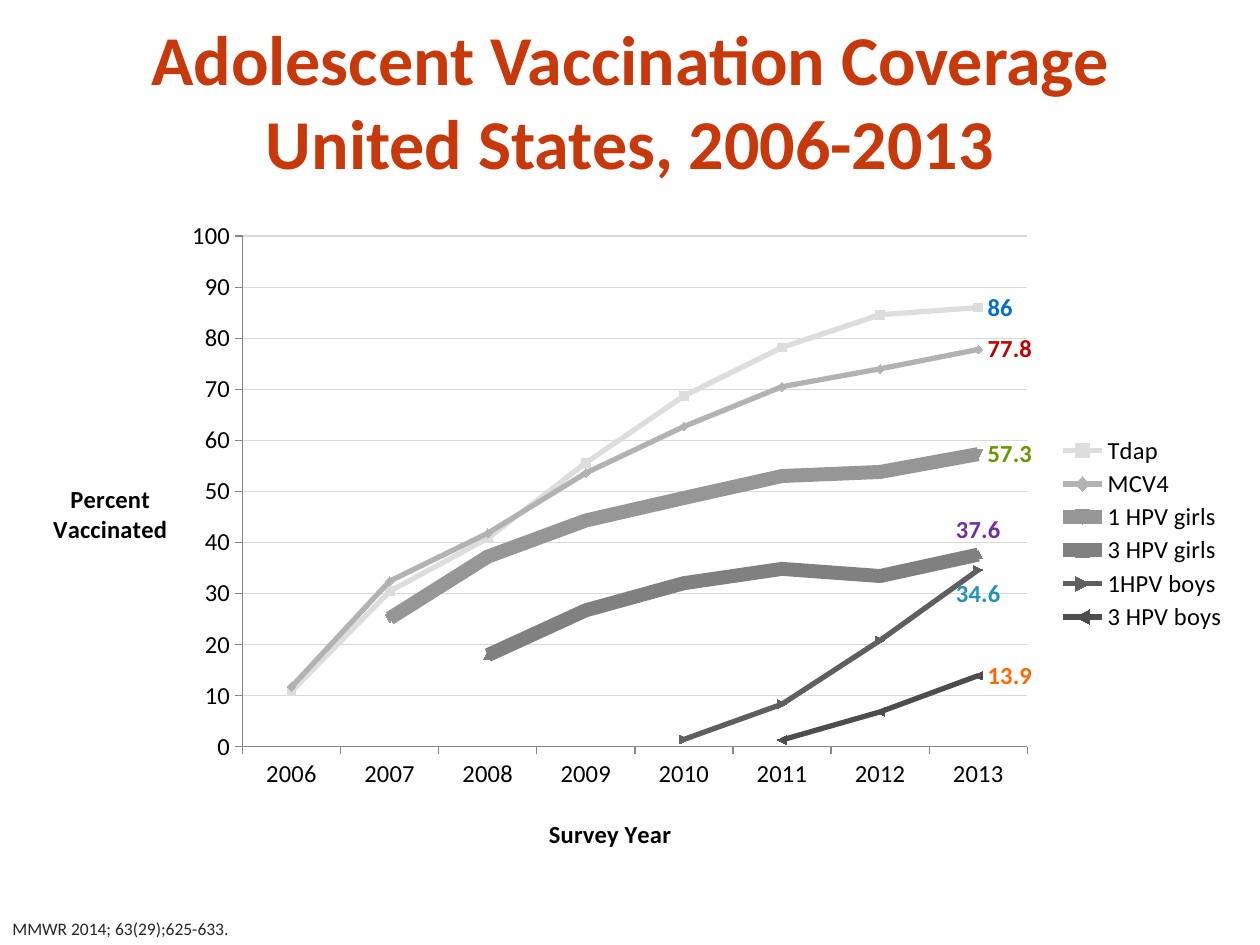
from lxml import etree
from pptx import Presentation
from pptx.chart.data import CategoryChartData
from pptx.dml.color import RGBColor
from pptx.enum.chart import XL_CHART_TYPE as ChartType
from pptx.enum.chart import XL_LABEL_POSITION as LabelPos
from pptx.enum.chart import XL_LEGEND_POSITION as LegendPos
from pptx.enum.chart import XL_MARKER_STYLE as MarkerStyle
from pptx.enum.chart import XL_TICK_MARK as TickMark
from pptx.enum.text import MSO_ANCHOR as Anchor
from pptx.enum.text import PP_ALIGN as Align
from pptx.oxml.ns import qn
from pptx.util import Pt

FACE = "Calibri"
YEARS = [str(year) for year in range(2006, 2014)]
COVERAGE = [
    ("Tdap", [10.8, 30.4, 40.8, 55.6, 68.7, 78.2, 84.6, 86],
     "DDDDDD", 3, "0070C0", LabelPos.RIGHT),
    ("MCV4", [11.7, 32.4, 41.8, 53.6, 62.7, 70.5, 74, 77.8],
     "B2B2B2", 3, "C00000", LabelPos.RIGHT),
    ("1 HPV girls", [25.1, 37.2, 44.3, 48.7, 53, 53.8, 57.3],
     "969696", 8, "669900", LabelPos.RIGHT),
    ("3 HPV girls", [17.9, 26.7, 32, 34.8, 33.4, 37.6],
     "808080", 8, "7030A0", LabelPos.ABOVE),
    ("1HPV boys", [1.4, 8.3, 20.8, 34.6],
     "5F5F5F", 3, "2392B4", LabelPos.BELOW),
    ("3 HPV boys", [1.3, 6.8, 13.9],
     "4D4D4D", 3, "FF6600", LabelPos.RIGHT),
]


def color(code):
    return RGBColor.from_string(code)


def style(font, size, code, bold=False):
    font.name = FACE
    font.size = Pt(size)
    font.bold = bold
    font.color.rgb = color(code)


def place(shape, box):
    shape.left, shape.top, shape.width, shape.height = map(Pt, box)


def set_layout(part, index, **fractions):
    for old in part.findall(qn("c:layout")):
        part.remove(old)
    layout = etree.Element(qn("c:layout"))
    manual = etree.SubElement(layout, qn("c:manualLayout"))
    if part.tag == qn("c:plotArea"):
        etree.SubElement(manual, qn("c:layoutTarget"), val="inner")
    for side in ("x", "y"):
        etree.SubElement(manual, qn(f"c:{side}Mode"), val="edge")
    for side, fraction in fractions.items():
        etree.SubElement(manual, qn(f"c:{side}"), val=str(fraction))
    part.insert(index, layout)


def add_heading(slide, box):
    heading = slide.shapes.title
    place(heading, box)
    frame = heading.text_frame
    frame.vertical_anchor = Anchor.MIDDLE
    line = frame.paragraphs[0]
    line.alignment = Align.CENTER
    for number, wording in enumerate(
            ("Adolescent Vaccination Coverage", "United States, 2006-2013")):
        if number:
            line.add_line_break()
        run = line.add_run()
        run.text = wording
        style(run.font, 40, "C7380B", True)


def add_citation(slide, box):
    frame = slide.shapes.add_textbox(*map(Pt, box)).text_frame
    frame.word_wrap = True
    frame.vertical_anchor = Anchor.BOTTOM
    run = frame.paragraphs[0].add_run()
    run.text = "MMWR 2014; 63(29);625-633."
    style(run.font, 10, "262626")


def format_axis(axis, caption, x, y):
    axis.major_tick_mark = TickMark.OUTSIDE
    axis.minor_tick_mark = TickMark.NONE
    axis.format.line.color.rgb = color("868686")
    axis.format.line.width = Pt(0.75)
    style(axis.tick_labels.font, 14, "000000")
    title = axis.axis_title
    frame = title.text_frame
    for number, wording in enumerate(caption):
        line = frame.add_paragraph() if number else frame.paragraphs[0]
        line.alignment = Align.CENTER
        run = line.add_run()
        run.text = wording
        style(run.font, 14, "000000", True)
    body = title._element.find(".//" + qn("a:bodyPr"))
    body.set("rot", "0")
    body.set("vert", "horz")
    set_layout(title._element, 1, x=x, y=y)


def format_series(series, line_color, width, label_color, position):
    series.smooth = False
    series.format.line.color.rgb = color(line_color)
    series.format.line.width = Pt(width)
    marker = series.marker
    marker.style = MarkerStyle.AUTOMATIC
    marker.size = 5
    marker.format.fill.solid()
    marker.format.fill.fore_color.rgb = color(line_color)
    marker.format.line.color.rgb = color(line_color)
    label = series.points[len(YEARS) - 1].data_label
    style(label.font, 14, label_color, True)
    label.position = position


def add_coverage_chart(slide, box):
    data = CategoryChartData()
    data.categories = YEARS
    for name, values, *_ in COVERAGE:
        data.add_series(name, [None] * (len(YEARS) - len(values)) + values)
    chart = slide.shapes.add_chart(
        ChartType.LINE_MARKERS, *map(Pt, box), data).chart
    chart.has_title = False
    style(chart.font, 10, "000000")

    percent = chart.value_axis
    percent.minimum_scale, percent.maximum_scale = 0, 100
    percent.major_unit = 10
    grid = percent.major_gridlines.format.line
    grid.color.rgb = color("D9D9D9")
    grid.width = Pt(0.75)
    format_axis(percent, ("Percent", "Vaccinated"), 0.02, 0.41)
    format_axis(chart.category_axis, ("Survey Year",), 0.43, 0.92)

    plot = chart.plots[0]
    plot.vary_by_categories = False
    for series, (_, _, *look) in zip(plot.series, COVERAGE):
        format_series(series, *look)

    chart.has_legend = True
    legend = chart.legend
    legend.position = LegendPos.RIGHT
    legend.include_in_layout = False
    style(legend.font, 14, "000000")
    set_layout(legend._element, 1, x=0.85, y=0.34, w=0.15, h=0.31)
    plot_area = chart._chartSpace.find(".//" + qn("c:plotArea"))
    set_layout(plot_area, 0, x=0.18, y=0.04, w=0.65, h=0.78)


def main():
    deck = Presentation()
    deck.slide_width, deck.slide_height = Pt(720), Pt(540)
    slide = deck.slides.add_slide(deck.slide_layouts[5])
    add_heading(slide, (0, 12, 720, 90))
    add_citation(slide, (0, 508, 522, 32))
    add_coverage_chart(slide, (14.4, 120, 690, 374))
    deck.save("out.pptx")


if __name__ == "__main__":
    main()
